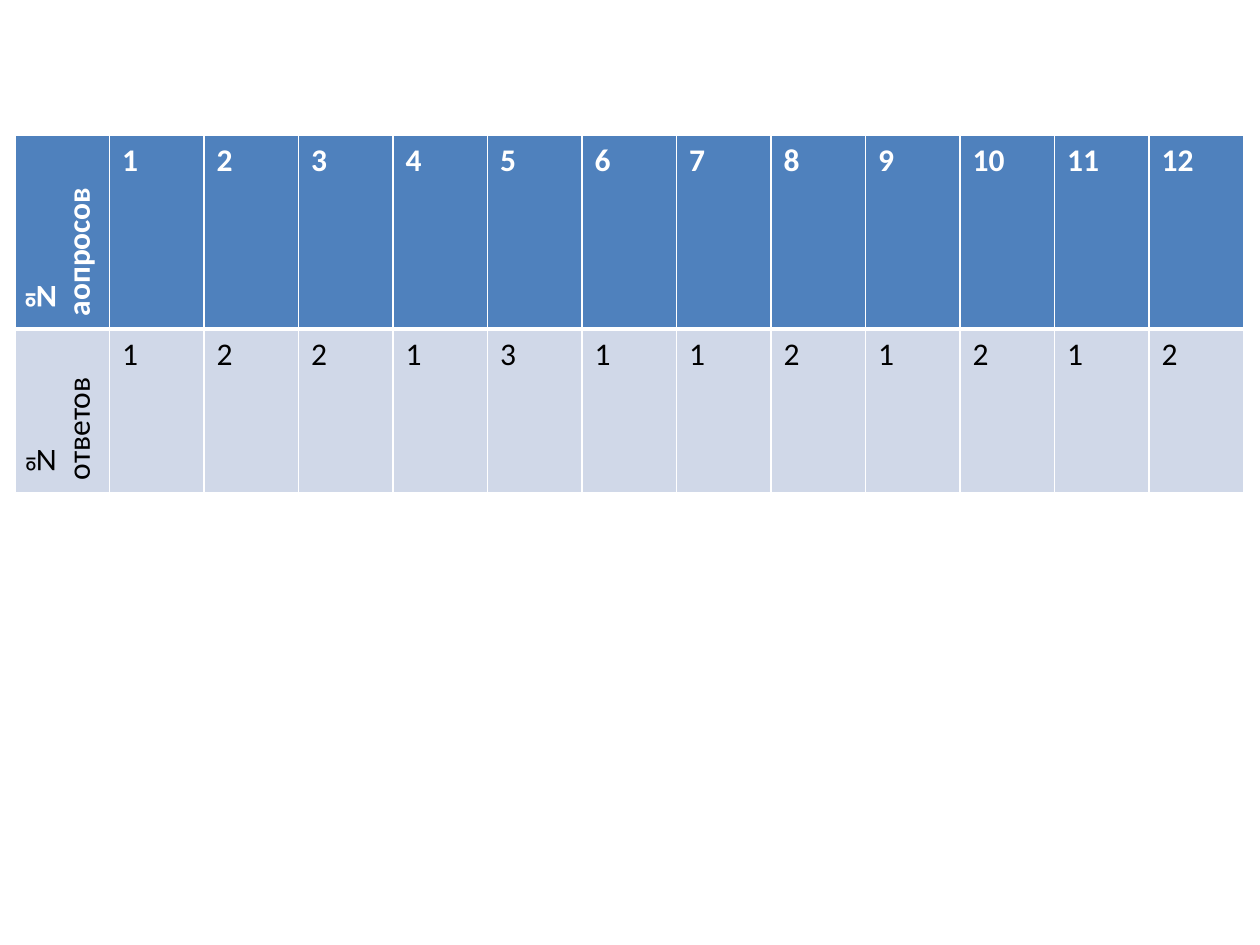
import dataclasses

import pptx
import pptx.dml.color
import pptx.oxml
import pptx.oxml.ns
import pptx.util

SLIDE_WIDTH = pptx.util.Inches(10)
SLIDE_HEIGHT = pptx.util.Inches(7.5)
BLANK_LAYOUT = 6


@dataclasses.dataclass(frozen=True)
class Theme:
    font: str = "Calibri"
    size: int = 18
    border: str = "FFFFFF"
    thin: int = 1
    thick: int = 3


THEME = Theme()
HEADER = {"fill": "4F81BD", "color": "FFFFFF", "bold": True}
BODY = {"fill": "D0D8E8", "color": "000000", "bold": False}

QUESTIONS = ["№ аопросов", *range(1, 13)]
ANSWERS = ["№ ответов", 1, 2, 2, 1, 3, 1, 1, 2, 1, 2, 1, 2]
ROWS = [(QUESTIONS, HEADER, 1.54), (ANSWERS, BODY, 1.3)]


def rgb(value):
    return pptx.dml.color.RGBColor.from_string(value)


def set_borders(cell, widths):
    """Draw cell edges; widths maps L, R, T, B (in schema order) to points."""
    properties = cell._tc.get_or_add_tcPr()
    for side, width in widths.items():
        properties.append(pptx.oxml.parse_xml(
            f'<a:ln{side} {pptx.oxml.ns.nsdecls("a")} w="{pptx.util.Pt(width)}">'
            f'<a:solidFill><a:srgbClr val="{THEME.border}"/></a:solidFill>'
            f'</a:ln{side}>'))


def fill_cell(cell, text, style):
    cell.fill.solid()
    cell.fill.fore_color.rgb = rgb(style["fill"])
    span = cell.text_frame.paragraphs[0].add_run()
    span.text = str(text)
    formats = {"name": THEME.font, "size": pptx.util.Pt(THEME.size),
               "bold": style["bold"]}
    for name, value in formats.items():
        setattr(span.font, name, value)
    span.font.color.rgb = rgb(style["color"])


def add_answer_table(page):
    column_width = pptx.util.Inches(0.75)
    height = pptx.util.Inches(sum(row[2] for row in ROWS))
    table = page.shapes.add_table(
        len(ROWS), len(QUESTIONS), pptx.util.Inches(0.12),
        pptx.util.Inches(1.07), column_width * len(QUESTIONS), height).table
    for column in table.columns:
        column.width = column_width

    for row_index, (values, style, row_height) in enumerate(ROWS):
        table.rows[row_index].height = pptx.util.Inches(row_height)
        is_header = row_index == 0
        widths = {"L": THEME.thin, "R": THEME.thin,
                  "T": THEME.thin if is_header else THEME.thick,
                  "B": THEME.thick if is_header else THEME.thin}
        for column_index, text in enumerate(values):
            cell = table.cell(row_index, column_index)
            set_borders(cell, widths)
            fill_cell(cell, text, style)
        table.cell(row_index, 0)._tc.get_or_add_tcPr().set("vert", "vert270")


def main():
    deck = pptx.Presentation()
    deck.slide_width, deck.slide_height = SLIDE_WIDTH, SLIDE_HEIGHT
    page = deck.slides.add_slide(deck.slide_layouts[BLANK_LAYOUT])
    add_answer_table(page)
    deck.save("out.pptx")


if __name__ == "__main__":
    main()
